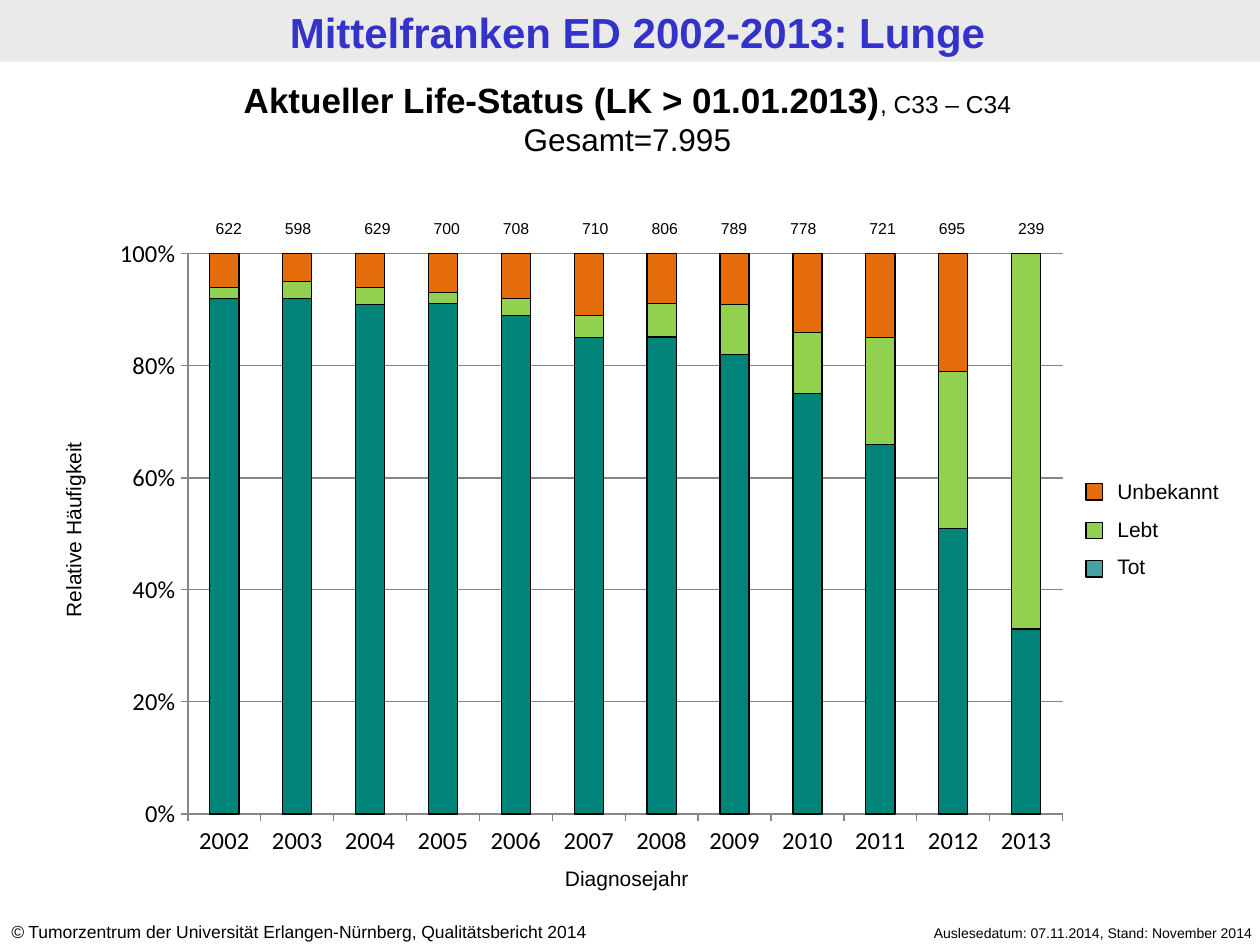
from collections import namedtuple

from lxml import etree
from pptx import Presentation
from pptx.chart.data import CategoryChartData
from pptx.dml.color import RGBColor
from pptx.enum import chart as ch, shapes, text
from pptx.oxml.ns import qn
from pptx.util import Inches, Pt

BLACK = RGBColor(0x00, 0x00, 0x00)
TITLE_BLUE = RGBColor(0x33, 0x33, 0xCC)
BAND_GREY = RGBColor(0xEA, 0xEA, 0xEA)
AXIS_GREY = RGBColor(0x86, 0x86, 0x86)
TEAL = RGBColor(0x00, 0x83, 0x78)
KEY_TEAL = RGBColor(0x00, 0x83, 0x80)
GREEN = RGBColor(0x92, 0xD0, 0x50)
ORANGE = RGBColor(0xE4, 0x6C, 0x0A)

LEFT, CENTER, RIGHT = (text.PP_ALIGN.LEFT, text.PP_ALIGN.CENTER,
                       text.PP_ALIGN.RIGHT)
Box = namedtuple("Box", "left top width height")

YEARS = [str(year) for year in range(2002, 2014)]
COUNTS = [622, 598, 629, 700, 708, 710, 806, 789, 778, 721, 695, 239]
STATUS_SHARES = [
    ("Series 1", TEAL, [92, 92, 91, 92, 89, 85, 86, 82, 75, 66, 51, 33]),
    ("Series 2", GREEN, [2, 3, 3, 2, 3, 4, 6, 9, 11, 19, 28, 67]),
    ("Series 3", ORANGE, [6, 5, 6, 7, 8, 11, 9, 9, 14, 15, 21, 0]),
]


def emu(box):
    return [Inches(length) for length in box]


def add_run(paragraph, wording, **formats):
    run = paragraph.add_run()
    run.text = wording
    run.font.color.rgb = formats.pop("color", BLACK)
    for name, value in {"name": "Arial", **formats}.items():
        setattr(run.font, name, value)


def add_text(slide, box, lines, align=LEFT, space_before=None):
    """Each line is a list of (wording, font formats) runs."""
    label = slide.shapes.add_textbox(*emu(box))
    frame = label.text_frame
    frame.word_wrap = True
    frame.auto_size = text.MSO_AUTO_SIZE.SHAPE_TO_FIT_TEXT
    for i, runs in enumerate(lines):
        paragraph = frame.add_paragraph() if i else frame.paragraphs[0]
        paragraph.alignment = align
        if i and space_before:
            paragraph.space_before = space_before
        for wording, formats in runs:
            add_run(paragraph, wording, **formats)
    return label


def add_rect(slide, box, color, outlined=False):
    rect = slide.shapes.add_shape(shapes.MSO_SHAPE.RECTANGLE, *emu(box))
    rect.shadow.inherit = False
    rect.fill.solid()
    rect.fill.fore_color.rgb = color
    if outlined:
        rect.line.color.rgb = BLACK
        rect.line.width = Pt(0.75)
    else:
        rect.line.fill.background()
    return rect


def add_header(slide, box):
    band = add_rect(slide, box, BAND_GREY)
    title = slide.shapes.title
    title.element.addprevious(band.element)
    place = emu(box._replace(left=box.left + 0.06, top=box.top + 0.01))
    for name, value in zip(Box._fields, place):
        setattr(title, name, value)
    frame = title.text_frame
    settings = {"margin_left": Inches(0.09), "margin_right": Inches(0.09),
                "margin_top": Inches(0.04), "margin_bottom": Inches(0.04),
                "word_wrap": True, "vertical_anchor": text.MSO_ANCHOR.TOP,
                "auto_size": text.MSO_AUTO_SIZE.NONE}
    for name, value in settings.items():
        setattr(frame, name, value)
    paragraph = frame.paragraphs[0]
    paragraph.alignment = CENTER
    add_run(paragraph, "Mittelfranken ED 2002-2013: Lunge", size=Pt(24),
            bold=True, color=TITLE_BLUE)


def add_subtitle(slide, box):
    add_text(slide, box, [
        [("Aktueller Life-Status (LK > 01.01.2013)",
          {"size": Pt(20), "bold": True}),
         (", C33 – C34", {"size": Pt(14)})],
        [("Gesamt=7.995", {"size": Pt(18)})],
    ], CENTER)


def fix_plot_area(chart, **fractions):
    """Pin the inner plot area to fractions x, y, w, h of the chart."""
    plot_area = chart.element.find(".//" + qn("c:plotArea"))
    layout = plot_area.find(qn("c:layout"))
    if layout is None:
        layout = etree.Element(qn("c:layout"))
        plot_area.insert(0, layout)
    manual = etree.SubElement(layout, qn("c:manualLayout"))
    settings = {"layoutTarget": "inner", "xMode": "edge", "yMode": "edge",
                **fractions}
    for name, value in settings.items():
        etree.SubElement(manual, qn("c:" + name), val=str(value))


def add_status_chart(slide, box):
    data = CategoryChartData()
    data.categories = YEARS
    for name, _, shares in STATUS_SHARES:
        data.add_series(name, shares)
    chart = slide.shapes.add_chart(ch.XL_CHART_TYPE.COLUMN_STACKED_100,
                                   *emu(box), data).chart
    chart.has_legend = False
    chart.has_title = False
    for name, value in {"name": "Calibri", "size": Pt(14)}.items():
        setattr(chart.font, name, value)
    chart.font.color.rgb = BLACK
    fix_plot_area(chart, x=0.09, y=0.044, w=0.89, h=0.87)

    plot = chart.plots[0]
    for name, value in {"gap_width": 150, "overlap": 100,
                        "vary_by_categories": False}.items():
        setattr(plot, name, value)
    for series, (_, color, _) in zip(plot.series, STATUS_SHARES):
        series.format.fill.solid()
        series.format.fill.fore_color.rgb = color
        series.format.line.color.rgb = BLACK
        series.format.line.width = Pt(0.75)

    shares_axis = chart.value_axis
    for name, value in {"minimum_scale": 0, "maximum_scale": 1,
                        "major_unit": 0.2, "has_major_gridlines": True}.items():
        setattr(shares_axis, name, value)
    shares_axis.tick_labels.number_format = "0%"
    shares_axis.tick_labels.number_format_is_linked = False
    for axis in (chart.category_axis, shares_axis):
        axis.major_tick_mark = ch.XL_TICK_MARK.OUTSIDE
        axis.tick_labels.font.size = Pt(14)
        axis.format.line.color.rgb = AXIS_GREY
    shares_axis.major_gridlines.format.line.color.rgb = AXIS_GREY


def add_axis_titles(slide, box):
    """Titles to the left of and below the chart's box."""
    size = {"size": Pt(12)}
    share = add_text(slide, Box(box.left - 1.41, box.top + 2.26, 2.41, 0.31),
                     [[("Relative Häufigkeit", size)]], CENTER)
    share.rotation = 270
    add_text(slide, Box(box.left + 3.06, box.top + 5.03, 2.25, 0.31),
             [[("Diagnosejahr", size)]], CENTER)


def add_counts(slide, box):
    """Cases per year; a few labels step further right to follow the bars."""
    step, nudge = 0.55, 0.08
    left = box.left
    for i, count in enumerate(COUNTS):
        if i in (2, 5, 9, 11):
            left += nudge
        add_text(slide, Box(left, box.top, step, box.height),
                 [[(str(count), {"size": Pt(9)})]], CENTER)
        left += step


def add_legend(slide, box):
    entries = [("Unbekannt", ORANGE), ("Lebt", GREEN), ("Tot", KEY_TEAL)]
    add_text(slide, box._replace(left=box.left + 0.15, width=box.width - 0.15),
             [[(status, {"size": Pt(12)})] for status, _ in entries],
             space_before=Pt(7))
    for i, (_, color) in enumerate(entries):
        key = add_rect(slide, Box(box.left, box.top + 0.09 + 0.305 * i,
                                  0.13, 0.13), color, outlined=True)
    fill_color = key.element.spPr.find(qn("a:solidFill")).find(qn("a:srgbClr"))
    etree.SubElement(fill_color, qn("a:alpha"), val="74000")


def add_footer(slide, box):
    add_text(slide, Box(box.left + 6.66, box.top + 0.03, 3.39, 0.24),
             [[("Auslesedatum: 07.11.2014, Stand: November 2014",
                {"size": Pt(8)})]], RIGHT)
    add_text(slide, box._replace(width=5.24), [[
        ("©", {"size": Pt(10), "italic": True}),
        (" Tumorzentrum der Universität Erlangen-Nürnberg, "
         "Qualitätsbericht 2014", {"size": Pt(10)})]])


def main():
    prs = Presentation()
    prs.slide_width, prs.slide_height = Inches(10), Inches(7.5)
    slide = prs.slides.add_slide(prs.slide_layouts[5])
    chart_box = Box(0.79, 1.79, 7.8, 5.11)
    add_header(slide, Box(0, 0, 10, 0.49))
    add_footer(slide, Box(-0.01, 7.26, 10.05, 0.27))
    add_status_chart(slide, chart_box)
    add_axis_titles(slide, chart_box)
    add_subtitle(slide, Box(-0.04, 0.57, 10.04, 0.74))
    add_counts(slide, Box(1.54, 1.69, 6.92, 0.25))
    add_legend(slide, Box(8.62, 3.75, 1.38, 0.91))
    prs.save("out.pptx")


if __name__ == "__main__":
    main()
